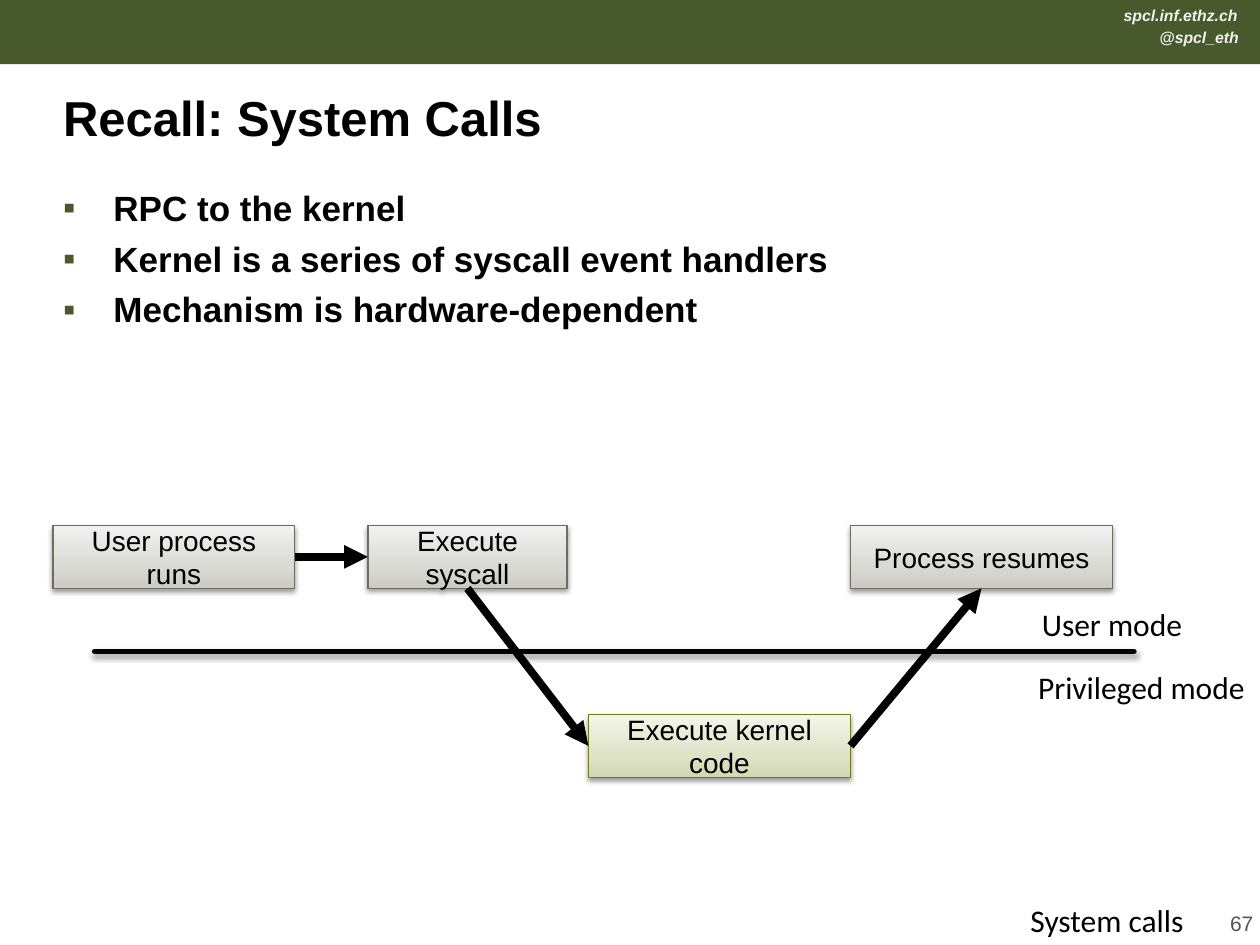
"""Build the slide recalling how system calls cross into the kernel."""
from lxml.etree import SubElement
from pptx import Presentation
from pptx.dml.color import RGBColor
from pptx.enum.shapes import MSO_CONNECTOR, MSO_SHAPE
from pptx.enum.text import MSO_ANCHOR as Anchor, MSO_AUTO_SIZE as AutoSize, PP_ALIGN as Align
from pptx.oxml.ns import qn
from pptx.util import Inches, Pt

COLORS = {
    "green": "485A2C", "header": "F2F2F2", "black": "000000", "number": "53534B",
    "user_line": "6D6D62", "kernel_line": "717919",
}
GRADIENTS = {
    "user": [(0, "CBCBC3"), (35, "DADAD5"), (100, "F1F1EF")],
    "kernel": [(0, "D3D8B0"), (35, "DFE3C8"), (100, "F3F5EA")],
}
HEADERS = [("spcl.inf.ethz.ch", (8.81, 0, 1.11, 0.25)), ("@spcl_eth", (9.09, 0.17, 0.84, 0.25))]
TITLE = "Recall: System Calls"
BULLETS = [
    "RPC to the kernel",
    "Kernel is a series of syscall event handlers",
    "Mechanism is hardware-dependent",
]
LABELS = [
    ("System calls", (8.08, 7.1, 1.43, 0.4)),
    ("Privileged mode", (8.14, 5.25, 1.85, 0.4)),
    ("User mode", (8.17, 4.75, 1.32, 0.4)),
]
PAGE_NUMBER = "67"
ROW_TOPS = {"user": 4.17, "kernel": 5.67}
STEP_HEIGHT = 0.5
STEPS = [
    ("User process runs", "user", 0.42, 1.92),
    ("Process resumes", "user", 6.75, 2.08),
    ("Execute kernel code", "kernel", 4.67, 2.08),
    ("Execute syscall", "user", 2.92, 1.58),
]
TOP, LEFT, BOTTOM, RIGHT = range(4)
ARROWS = [
    ("User process runs", RIGHT, "Execute syscall", LEFT),
    ("Execute syscall", BOTTOM, "Execute kernel code", LEFT),
    ("Execute kernel code", RIGHT, "Process resumes", BOTTOM),
]
BODY_INSETS = (0.15, 0, 0.16, 0)


def rgb(name):
    return RGBColor.from_string(COLORS[name])


def format_text(paragraph, size, color="black", font="Arial", bold=False, italic=False, align=Align.LEFT):
    paragraph.alignment = align
    for run in paragraph.runs:
        run.font.size, run.font.name = Pt(size), font
        run.font.bold, run.font.italic = bold, italic
        run.font.color.rgb = rgb(color)


def add_text(slide, lines, place, size, wrap=False, grow=False, insets=None, anchor=Anchor.TOP, **style):
    frame = slide.shapes.add_textbox(*map(Inches, place)).text_frame
    frame.text = "\n".join(lines)
    frame.word_wrap, frame.vertical_anchor = wrap, anchor
    frame.auto_size = AutoSize.SHAPE_TO_FIT_TEXT if grow else AutoSize.NONE
    if insets:
        (frame.margin_left, frame.margin_top,
         frame.margin_right, frame.margin_bottom) = map(Inches, insets)
    for paragraph in frame.paragraphs:
        format_text(paragraph, size, **style)
    return frame


def add_bullet(paragraph):
    properties = paragraph._p.get_or_add_pPr()
    properties.set("marL", str(Inches(0.4)))
    properties.set("indent", str(Inches(-0.4)))
    color = SubElement(properties, qn("a:buClr"))
    SubElement(color, qn("a:srgbClr"), val=COLORS["green"])
    SubElement(properties, qn("a:buFont"), typeface="Arial")
    SubElement(properties, qn("a:buChar"), char="▪")


def add_shadow(effects, opacity, distance):
    shadow = SubElement(effects, qn("a:outerShdw"), blurRad=str(Pt(3.1)),
                        dist=str(Pt(distance)), dir="5400000", rotWithShape="0")
    color = SubElement(shadow, qn("a:srgbClr"), val=COLORS["black"])
    SubElement(color, qn("a:alpha"), val=str(opacity * 1000))


def fill_gradient(shape, stops):
    shape.fill.gradient()
    shape.fill.gradient_angle = 90
    stop_list = shape._element.spPr.find(f".//{qn('a:gsLst')}")
    for stop in list(stop_list):
        stop_list.remove(stop)
    for position, color in stops:
        stop = SubElement(stop_list, qn("a:gs"), pos=str(position * 1000))
        SubElement(stop, qn("a:srgbClr"), val=color)


def add_step(slide, text, mode, left, width):
    place = map(Inches, (left, ROW_TOPS[mode], width, STEP_HEIGHT))
    shape = slide.shapes.add_shape(MSO_SHAPE.RECTANGLE, *place)
    fill_gradient(shape, GRADIENTS[mode])
    shape.line.color.rgb, shape.line.width = rgb(f"{mode}_line"), Pt(0.75)
    shape.shadow.inherit = False
    add_shadow(shape._element.spPr.find(qn("a:effectLst")), 38, 1.6)
    frame = shape.text_frame
    frame.text, frame.word_wrap, frame.vertical_anchor = text, True, Anchor.MIDDLE
    format_text(frame.paragraphs[0], 16, align=Align.CENTER)
    return shape


def add_line(slide, width, points=(0, 0, 0, 0)):
    line = slide.shapes.add_connector(MSO_CONNECTOR.STRAIGHT, *map(Inches, points))
    line.line.color.rgb, line.line.width = rgb("black"), Pt(width)
    effects = SubElement(line._element.spPr, qn("a:effectLst"))
    return line, effects


def main():
    presentation = Presentation()
    presentation.slide_width, presentation.slide_height = Inches(10), Inches(7.5)
    slide = presentation.slides.add_slide(presentation.slide_layouts[6])

    banner = slide.shapes.add_shape(MSO_SHAPE.RECTANGLE, 0, 0, Inches(10), Inches(0.51))
    banner.fill.solid()
    banner.fill.fore_color.rgb = rgb("green")
    banner.line.fill.background()
    banner.shadow.inherit = False
    for text, place in HEADERS:
        add_text(slide, [text], place, 9, grow=True, color="header", bold=True, italic=True, align=Align.RIGHT)

    add_text(slide, [TITLE], (0.35, 0.58, 9.29, 0.58), 28, wrap=True,
             insets=BODY_INSETS, anchor=Anchor.BOTTOM, bold=True)
    body = add_text(slide, BULLETS, (0.35, 1.48, 9.28, 5.61), 20, wrap=True, insets=BODY_INSETS, bold=True)
    for index, paragraph in enumerate(body.paragraphs):
        add_bullet(paragraph)
        paragraph.space_before = Pt(5 if index else 0)
    for text, place in LABELS:
        add_text(slide, [text], place, 18, grow=True, font="Calibri")

    divider, effects = add_line(slide, 3, (0.75, 5.17, 9, 5.17))
    divider.line._get_or_add_ln().set("cap", "rnd")
    add_shadow(effects, 35, 1.8)

    steps = {step[0]: add_step(slide, *step) for step in STEPS}
    for source, source_side, target, target_side in ARROWS:
        arrow, _ = add_line(slide, 4.5)
        arrow.begin_connect(steps[source], source_side)
        arrow.end_connect(steps[target], target_side)
        SubElement(arrow.line._get_or_add_ln(), qn("a:tailEnd"), type="triangle")

    add_text(slide, [PAGE_NUMBER], (9.71, 7.07, 0.29, 0.51), 12, insets=(0, 0, 0, 0),
             anchor=Anchor.MIDDLE, color="number", align=Align.CENTER)
    presentation.save("out.pptx")


if __name__ == "__main__":
    main()
